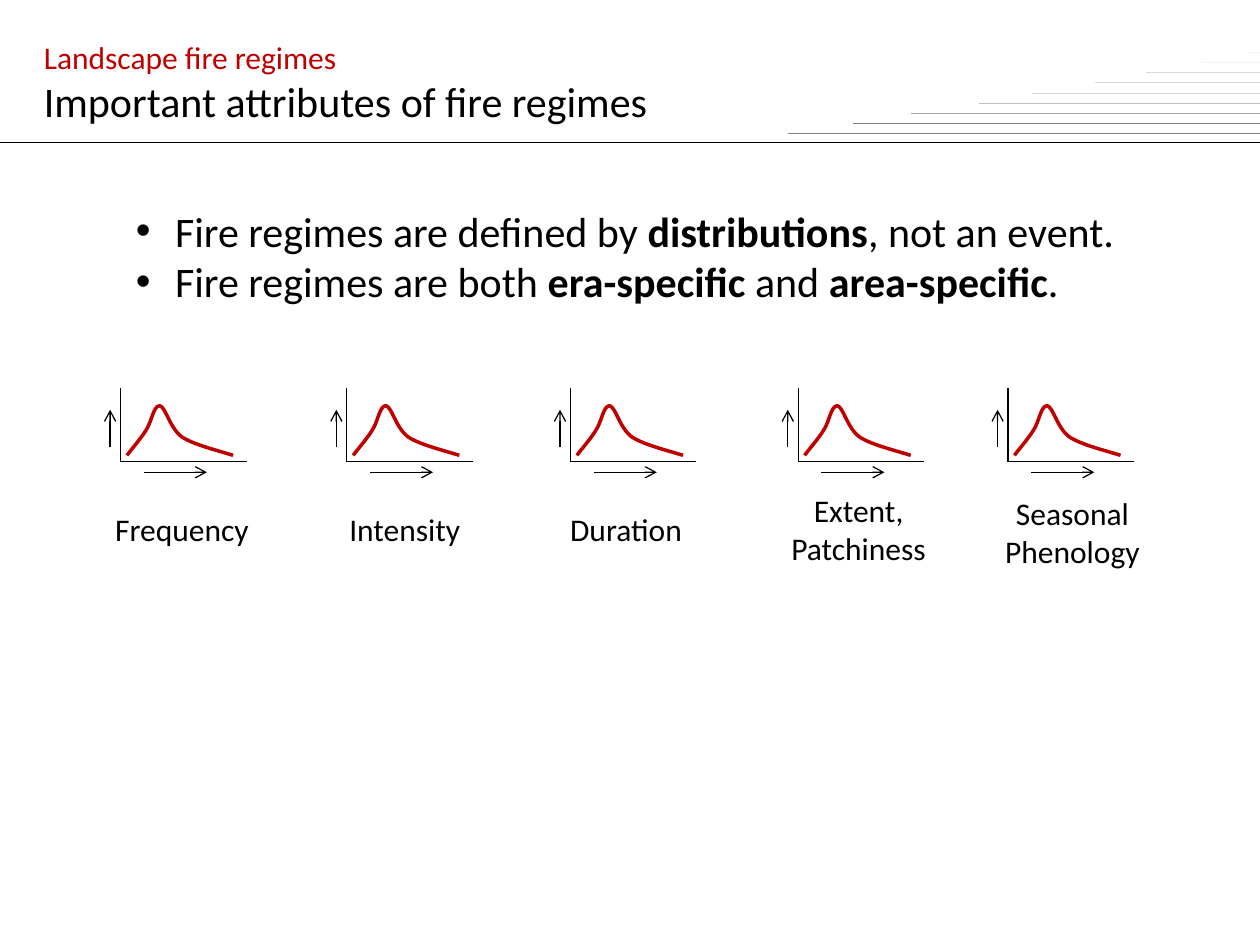
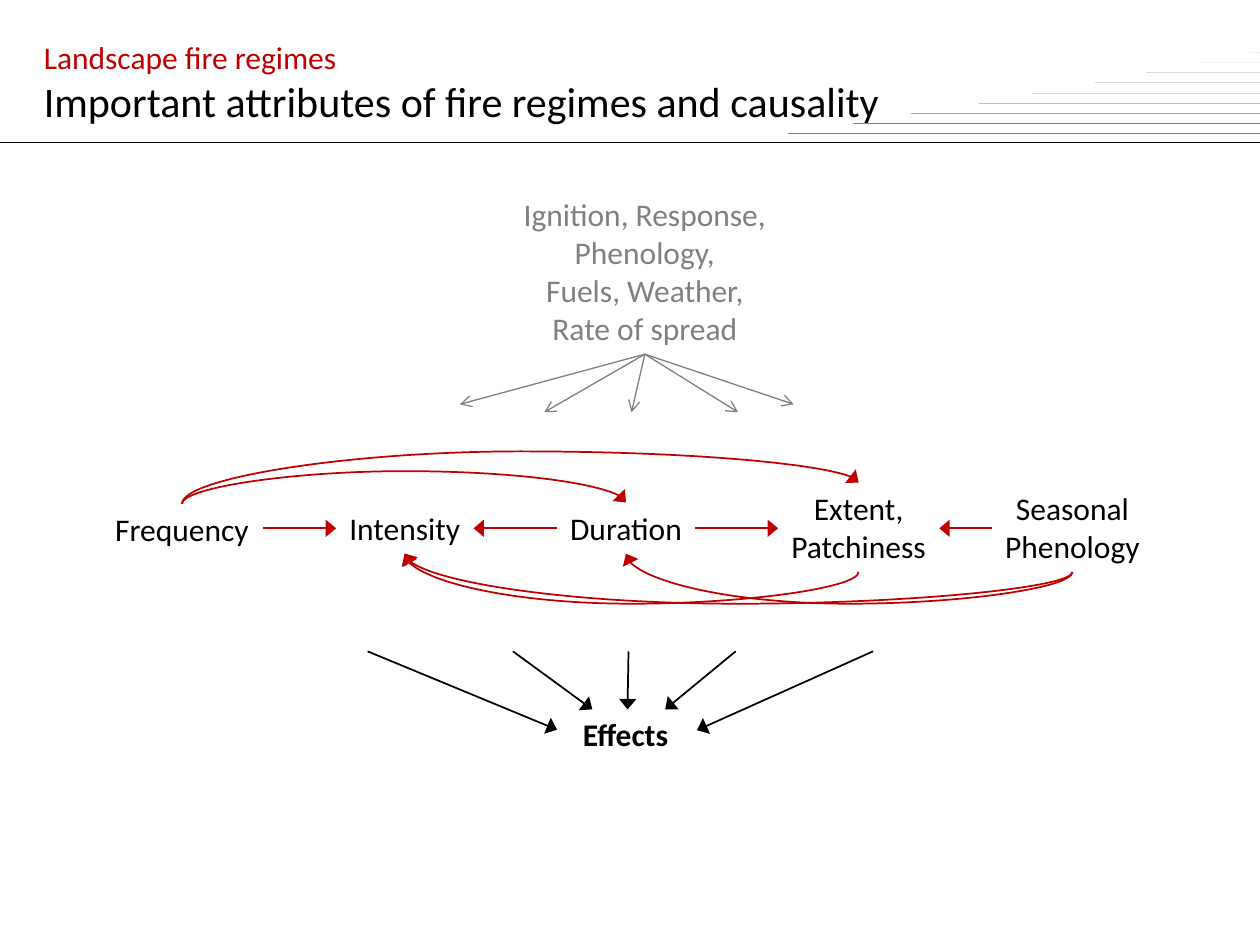
from collections import namedtuple
from itertools import pairwise

from lxml.etree import SubElement
from pptx import Presentation
from pptx.dml.color import RGBColor
from pptx.enum.shapes import MSO_CONNECTOR as CONN
from pptx.enum.text import MSO_ANCHOR as ANCHOR, MSO_AUTO_SIZE as AUTO, PP_ALIGN as ALIGN
from pptx.oxml.ns import qn
from pptx.util import Cm, Pt

BLACK = RGBColor(0x00, 0x00, 0x00)
RED = RGBColor(0xC0, 0x00, 0x00)
GREY = RGBColor(0x80, 0x80, 0x80)
GREY_2 = RGBColor(0xA6, 0xA6, 0xA6)
GREY_3 = RGBColor(0xBF, 0xBF, 0xBF)
GREY_4 = RGBColor(0xD9, 0xD9, 0xD9)
GREY_5 = RGBColor(0xF2, 0xF2, 0xF2)
FONT = "Calibri"
BULLET_FONT = "Arial"
SLIDE_W, SLIDE_H = 25.4, 19.05

RULES = [(15.88, GREY), (17.2, GREY), (18.36, GREY_2), (19.74, GREY_3), (20.8, GREY_4),
         (22.07, GREY_4), (23.11, GREY_4), (24.23, GREY_5), (25.2, GREY_5)]
RULES_TOP, RULES_BOTTOM = 1.06, 2.68

Attribute = namedtuple("Attribute", "text centre width axis")
FREQUENCY = Attribute("Frequency", 3.67, 3.25, 2.43)
INTENSITY = Attribute("Intensity", 8.16, 2.77, 6.99)
DURATION = Attribute("Duration", 12.62, 2.79, 11.5)
EXTENT = Attribute("Extent,\nPatchiness", 17.31, 3.25, 16.09)
SEASON = Attribute("Seasonal\nPhenology", 21.62, 3.25, 20.32)
ATTRIBUTES = [FREQUENCY, INTENSITY, DURATION, EXTENT, SEASON]

CHART_TOP, CHART_BASE = 7.82, 9.31
HUMP = [(0.13, 1.36), (0.26, 1.19), (0.41, 1.02), (0.51, 0.86),
        (0.63, 0.69), (0.66, 0.36), (0.79, 0.36),
        (0.91, 0.38), (0.99, 0.81), (1.24, 0.99),
        (1.47, 1.14), (1.88, 1.24), (2.27, 1.36)]


def style_font(font, size, color, bold=False):
    font.name = FONT
    font.size = Pt(size)
    font.bold = bold
    font.color.rgb = color


def style_connector(c, color, width, head):
    c.line.color.rgb = color
    c.line.width = Pt(width)
    spPr = c.element.spPr
    if head:
        tail = SubElement(spPr.find(qn("a:ln")), qn("a:tailEnd"), type=head)
        if head == "triangle":
            tail.set("w", "lg")
    SubElement(spPr, qn("a:effectLst"))


def add_line(shapes, start, end, color=BLACK, width=0.75, head=None):
    c = shapes.add_connector(CONN.STRAIGHT, *map(Cm, start + end))
    style_connector(c, color, width, head)


def add_bow(shapes, start, end, bow_y):
    (x0, y0), (x1, y1) = start, end
    w, h = abs(y1 - y0), abs(x1 - x0)
    left, top = (x0 + x1 - w) / 2, (y0 + y1 - h) / 2
    c = shapes.add_connector(CONN.CURVE, Cm(left), Cm(top), Cm(left + w), Cm(top + h))
    xfrm = c.element.spPr.find(qn("a:xfrm"))
    xfrm.set("rot", "5400000")
    xfrm.set("flipH", str(int(y1 < y0)))
    xfrm.set("flipV", str(int(x1 > x0)))
    bend = round(100000 * (bow_y - y0) / (y1 - y0))
    avLst = c.element.spPr.find(qn("a:prstGeom")).find(qn("a:avLst"))
    SubElement(avLst, qn("a:gd"), name="adj1", fmla=f"val {bend}")
    style_connector(c, RED, 1, "triangle")


def add_text(s, text, left, top, width, height, color=BLACK, bold=False,
             wrap=False, align=ALIGN.CENTER):
    tf = s.shapes.add_textbox(Cm(left), Cm(top), Cm(width), Cm(height)).text_frame
    tf.word_wrap = wrap
    tf.text = text
    for p in tf.paragraphs:
        p.alignment = align
        style_font(p.runs[0].font, 18, color, bold)


def add_bullets(s, items, left, top, width, height):
    tf = s.shapes.add_textbox(Cm(left), Cm(top), Cm(width), Cm(height)).text_frame
    tf.word_wrap = False
    for i, parts in enumerate(items):
        p = tf.add_paragraph() if i else tf.paragraphs[0]
        pPr = p._p.get_or_add_pPr()
        pPr.set("marL", str(Cm(0.79)))
        pPr.set("indent", str(-Cm(0.79)))
        SubElement(pPr, qn("a:buFont"), typeface=BULLET_FONT)
        SubElement(pPr, qn("a:buChar"), char="•")
        for n, text in enumerate(parts):
            r = p.add_run()
            r.text = text
            style_font(r.font, 24, BLACK, bold=n % 2 == 1)


def add_header(s, title, width):
    sp = s.shapes.title
    sp.left, sp.top, sp.width, sp.height = map(Cm, (0.63, 0.64, width, 2.06))
    tf = sp.text_frame
    tf.text = f"Landscape fire regimes\n{title}"
    tf.word_wrap = False
    tf.auto_size = AUTO.NONE
    tf.vertical_anchor = ANCHOR.TOP
    for p, size, color in zip(tf.paragraphs, (18, 24), (RED, BLACK)):
        p.alignment = ALIGN.LEFT
        style_font(p.runs[0].font, size, color)
    rules = s.shapes.add_group_shape().shapes
    add_line(rules, (0, 2.87), (SLIDE_W, 2.87), BLACK, 0.25)
    gap = (RULES_BOTTOM - RULES_TOP) / (len(RULES) - 1)
    for i, (x, color) in enumerate(RULES):
        y = RULES_BOTTOM - i * gap
        add_line(rules, (x, y), (SLIDE_W, y), color, 0.25)


def add_labels(s, tops):
    for a, top in zip(ATTRIBUTES, tops):
        height = 1.8 if "\n" in a.text else 1.02
        add_text(s, a.text, a.centre - a.width / 2, top, a.width, height)


def add_hump(shapes, x):
    points = [(Cm(x + dx), Cm(CHART_TOP + dy)) for dx, dy in HUMP]
    fb = shapes.build_freeform(*points[0])
    fb.add_line_segments(points[1:], close=False)
    sp = fb.convert_to_shape()
    segments = list(sp.element.spPr.iter(qn("a:lnTo")))
    outline = segments[0].getparent()
    for i in range(0, len(segments), 3):
        curve = SubElement(outline, qn("a:cubicBezTo"))
        for segment in segments[i:i + 3]:
            curve.append(segment[0])
            outline.remove(segment)
    sp.shadow.inherit = False
    sp.fill.background()
    sp.line.color.rgb = RED
    sp.line.width = Pt(2)


def add_distribution(s, x):
    shapes = s.shapes.add_group_shape().shapes
    add_line(shapes, (x, CHART_TOP), (x, CHART_BASE))
    add_line(shapes, (x, CHART_BASE), (x + 2.54, CHART_BASE))
    add_hump(shapes, x)
    add_line(shapes, (x + 0.47, 9.52), (x + 1.74, 9.52), head="arrow")
    add_line(shapes, (x - 0.21, 9.02), (x - 0.21, 8.26), head="arrow")


def build_attributes(s):
    add_header(s, "Important attributes of fire regimes", 12.8)
    add_labels(s, (10.16, 10.16, 10.16, 9.77, 9.83))
    for a in ATTRIBUTES:
        add_distribution(s, a.axis)
    add_bullets(s, [
        ("Fire regimes are defined by ", "distributions", ", not an event."),
        ("Fire regimes are both ", "era-specific ", "and ", "area-specific", "."),
    ], 2.49, 4.01, 20.45, 2.31)


def build_causality(s):
    add_header(s, "Important attributes of fire regimes and causality", 17.53)
    add_labels(s, (10.16, 10.13, 10.13, 9.73, 9.73))

    add_text(s, "Ignition, Response,\nPhenology,\nFuels, Weather,\nRate of spread",
             9.99, 3.81, 6.02, 3.33, GREY, wrap=True)
    for tip in [(9.27, 8.15), (10.97, 8.31), (12.73, 8.31), (14.88, 8.31), (16, 8.15)]:
        add_line(s.shapes, (13, 7.14), tip, GREY, head="arrow")

    for (a, b), forward in zip(pairwise(ATTRIBUTES), (True, False, True, False)):
        ends = [(a.centre + a.width / 2, 10.65), (b.centre - b.width / 2, 10.65)]
        start, end = ends if forward else ends[::-1]
        add_line(s.shapes, start, end, RED, 1, "triangle")

    for a, top, bow_y in [(EXTENT, 9.73, 9.1), (DURATION, 10.13, 9.5)]:
        add_bow(s.shapes, (FREQUENCY.centre, 10.16), (a.centre, top), bow_y)
    for a, b in [(SEASON, INTENSITY), (SEASON, DURATION), (EXTENT, INTENSITY)]:
        add_bow(s.shapes, (a.centre, 11.53), (b.centre, 11.16), 12.17)

    add_text(s, "Effects", 11.5, 14.29, 2.26, 1.02, bold=True, align=ALIGN.LEFT)
    for x, tip in [(7.41, (11.23, 14.71)), (10.34, (11.94, 14.3)), (12.67, (12.65, 14.3)),
                   (14.83, (13.41, 14.3)), (17.6, (14.05, 14.72))]:
        add_line(s.shapes, (x, 13.13), tip, BLACK, 1, "triangle")


def main():
    prs = Presentation()
    prs.slide_width, prs.slide_height = Cm(SLIDE_W), Cm(SLIDE_H)
    for build in (build_attributes, build_causality):
        build(prs.slides.add_slide(prs.slide_layouts[5]))
    prs.save("out.pptx")


if __name__ == "__main__":
    main()
